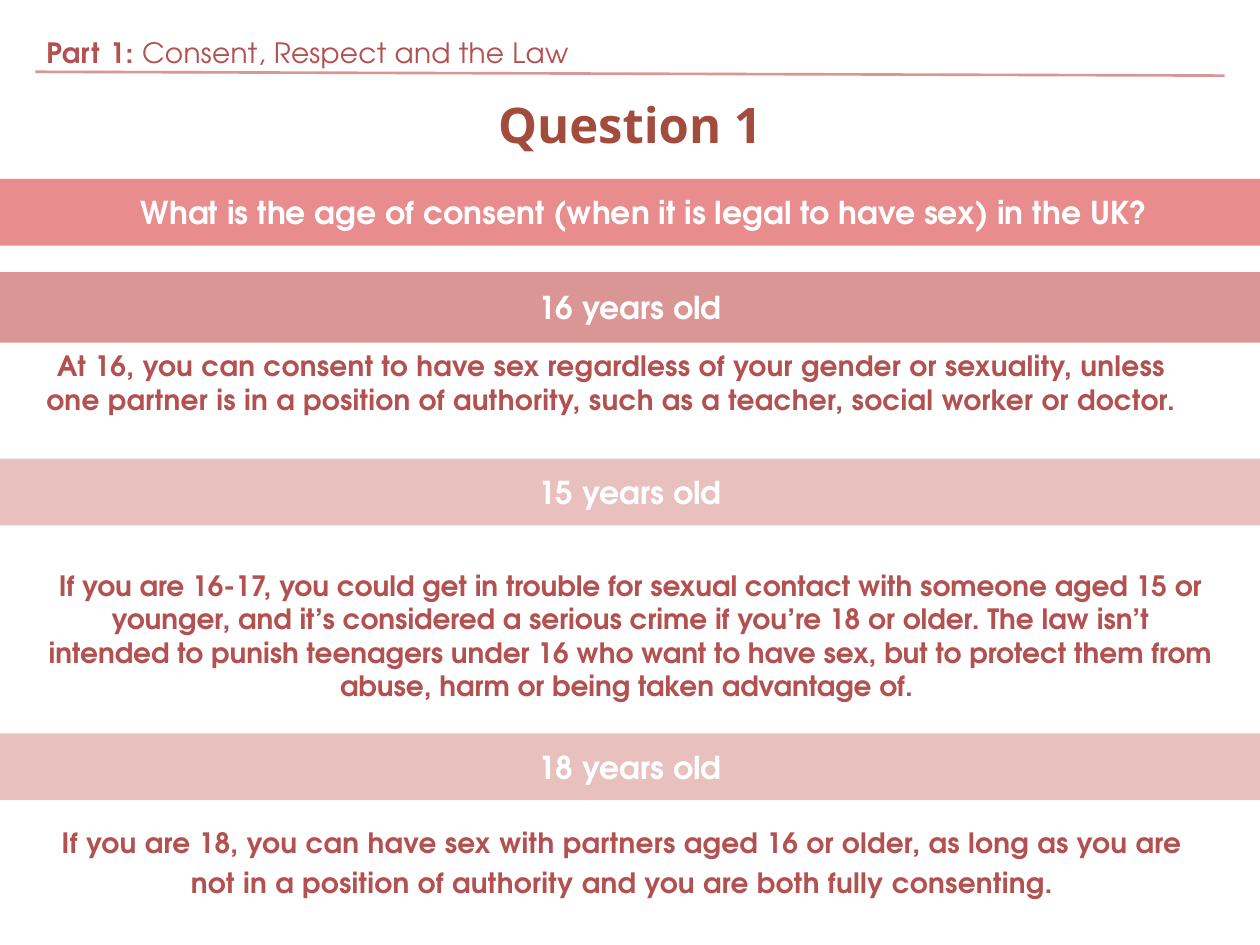
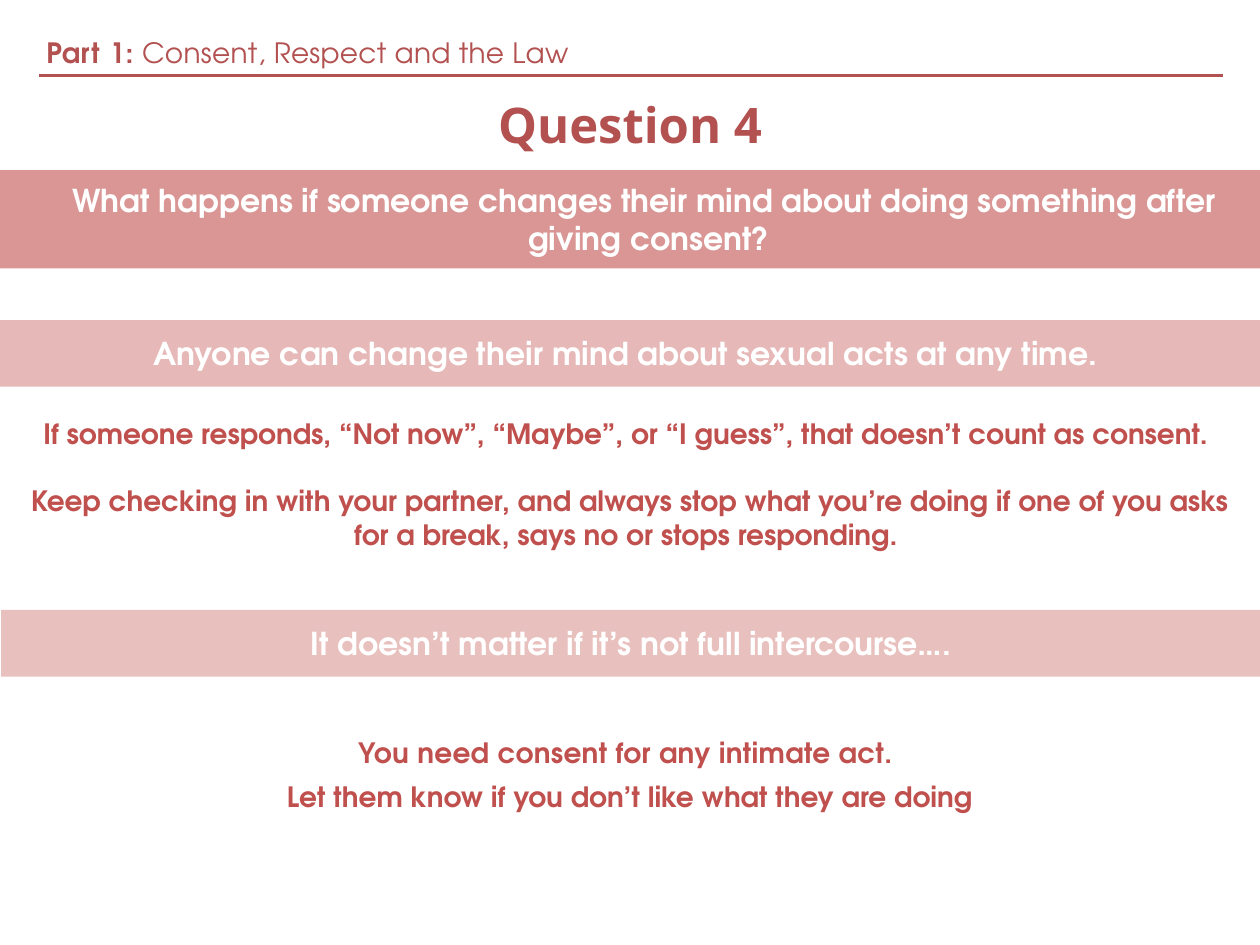
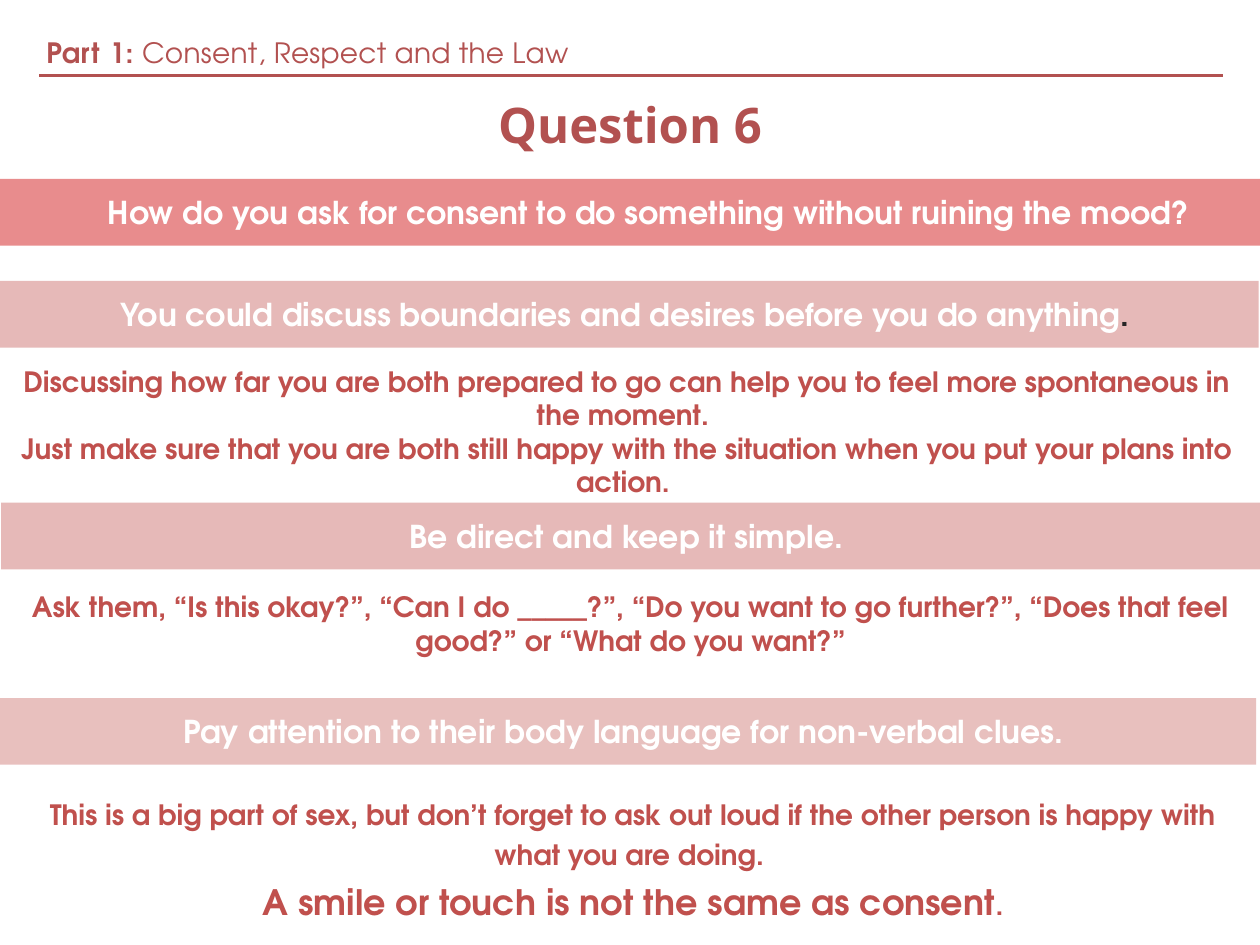
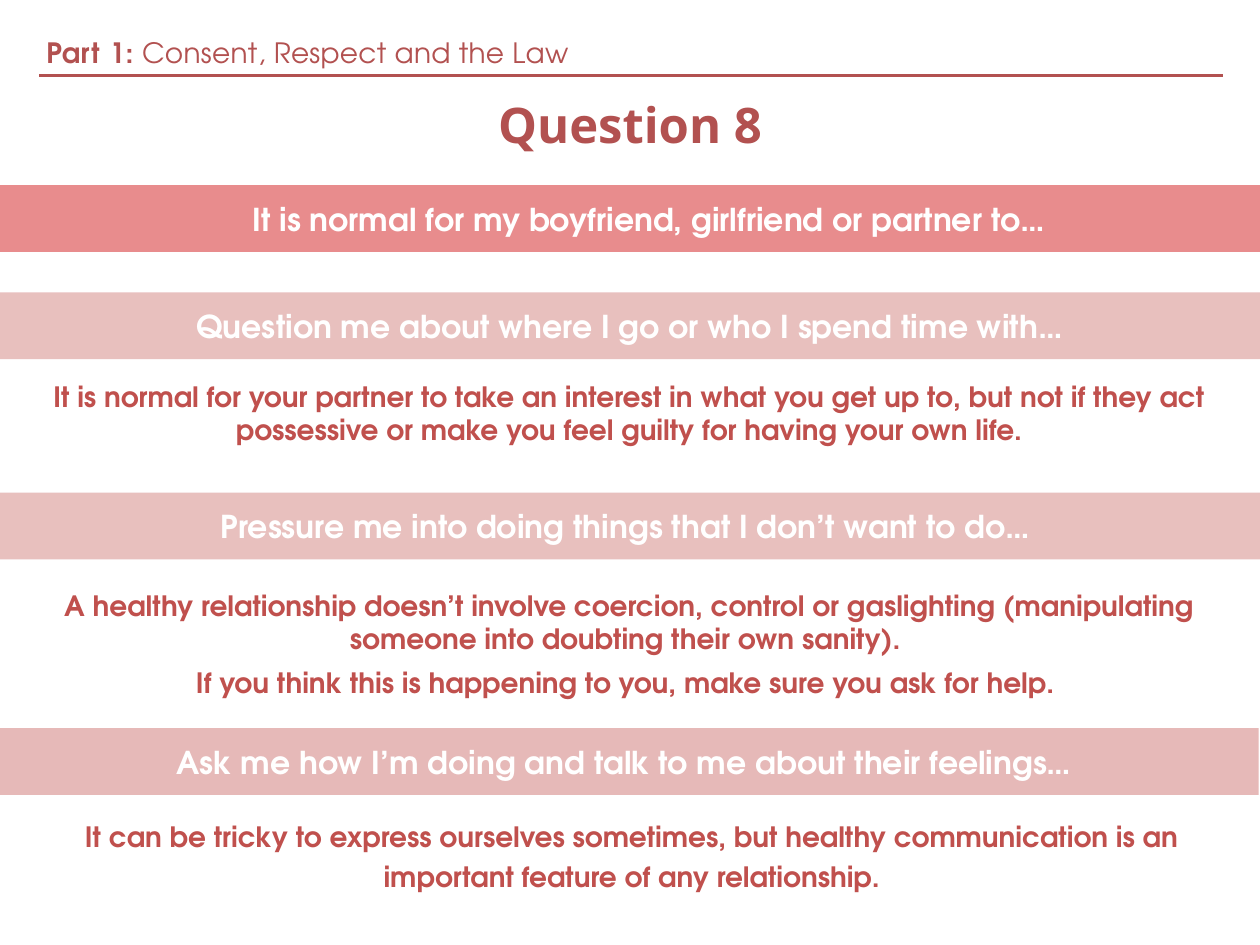
from lxml import etree
from pptx import Presentation
from pptx.dml.color import RGBColor
from pptx.enum.shapes import MSO_CONNECTOR as Connector, MSO_SHAPE as Shape
from pptx.enum.text import MSO_ANCHOR as Anchor, MSO_AUTO_SIZE as AutoSize, PP_ALIGN as Align
from pptx.oxml.ns import qn
from pptx.util import Emu, Pt

EMU_PER_PX = 9144
WIDTH, HEIGHT = 1000, 750
BAND_HEIGHT = 53
QUESTION_INDENT = 30
TITLE_FONT = "Open Sans"
TEXT_FONT = "TeX Gyre Adventor"
COLORS = {
    "white": "FFFFFF",
    "ink": "262626",
    "brown": "A24C3E",
    "brick": "B25150",
    "red": "C0504D",
    "scarlet": "D94041",
    "rose": "D99694",
    "blush": "E6B9B8",
}


def px(length):
    """Turn a length in px into EMU."""
    return Emu(length * EMU_PER_PX)


def px_box(box):
    """Turn a left, top, width, height box into EMU."""
    return [px(length) for length in box]


def rgb(color):
    """Look up a named colour."""
    return RGBColor.from_string(COLORS[color])


def add_run(paragraph, text, size=16, color="red", bold=True, font=TEXT_FONT, spacing=0):
    """Add text to a paragraph as one styled run per line."""
    for number, line in enumerate(text.split("\n")):
        if number:
            paragraph.add_line_break()
        run = paragraph.add_run()
        run.text = line
        run.font.name = font
        run.font.size = Pt(size)
        run.font.bold = bold
        run.font.color.rgb = rgb(color)
        if spacing:
            run._r.get_or_add_rPr().set("spc", str(spacing))


def add_header(slide, color, rule_start, rule_end):
    """Add the running part heading and the rule under it."""
    header = slide.shapes.add_textbox(*px_box((27, 23, 973, 31)))
    header.text_frame.word_wrap = True
    paragraph = header.text_frame.paragraphs[0]
    for text, spacing, bold in (
        ("Pa", 20, True),
        ("rt", 90, True),
        (" 1: ", 20, True),
        ("Consent, Respect and the Law", 20, False),
    ):
        add_run(paragraph, text, color="brick", bold=bold, spacing=spacing)
    rule = slide.shapes.add_connector(Connector.STRAIGHT, *px_box(rule_start + rule_end))
    rule.line.color.rgb = rgb(color)
    rule.line.width = Pt(1.5)
    etree.SubElement(rule._element.spPr, qn("a:effectLst"))


def add_title(slide, text, color):
    """Place the slide title across the full width."""
    title = slide.shapes.title
    title.left, title.top, title.width, title.height = px_box((0, 70, WIDTH, 56))
    frame = title.text_frame
    frame.auto_size = AutoSize.NONE
    frame.vertical_anchor = Anchor.MIDDLE
    paragraph = frame.paragraphs[0]
    paragraph.alignment = Align.CENTER
    add_run(paragraph, text, size=28, color=color, font=TITLE_FONT)


def add_band(slide, top, text, fill="rose", opacity=60, left=0, width=WIDTH,
             height=BAND_HEIGHT, indent=0, ending=""):
    """Add a coloured band with centred white text."""
    band = slide.shapes.add_shape(Shape.RECTANGLE, *px_box((left, top, width, height)))
    band.shadow.inherit = False
    band.fill.solid()
    band.fill.fore_color.rgb = rgb(fill)
    band.line.fill.background()
    if opacity < 100:
        tint = band._element.spPr.find(qn("a:solidFill"))[0]
        etree.SubElement(tint, qn("a:alpha"), val=str(opacity * 1000))
    frame = band.text_frame
    frame.word_wrap = True
    frame.vertical_anchor = Anchor.MIDDLE
    paragraph = frame.paragraphs[0]
    paragraph.alignment = Align.CENTER
    if indent:
        paragraph._p.get_or_add_pPr().set("marL", str(px(indent)))
    add_run(paragraph, text, size=18, color="white")
    if ending:
        add_run(paragraph, ending, size=18, color="ink")


def add_question(slide, top, text, fill="scarlet", height=BAND_HEIGHT):
    """Add the band that asks the question."""
    add_band(slide, top, text, fill, height=height, indent=QUESTION_INDENT)


def add_body(slide, box, paragraphs, color="red", leading=None, before=0, after=0):
    """Add centred paragraphs, each a list of (text, run options) pairs."""
    body = slide.shapes.add_textbox(*px_box(box))
    frame = body.text_frame
    frame.word_wrap = True
    frame.auto_size = AutoSize.SHAPE_TO_FIT_TEXT
    for number, runs in enumerate(paragraphs):
        paragraph = frame.add_paragraph() if number else frame.paragraphs[0]
        paragraph.alignment = Align.CENTER
        paragraph.space_after = Pt(after)
        if number and before:
            paragraph.space_before = Pt(before)
        if leading:
            paragraph.line_spacing = Pt(leading)
        for text, options in runs:
            add_run(paragraph, text, color=color, **options)


def start_slide(presentation, title, color="brick", rule_color="brick",
                rule_start=(31, 60), rule_end=(971, 60)):
    """Add a slide with the shared header and title."""
    slide = presentation.slides.add_slide(presentation.slide_layouts[5])
    add_header(slide, rule_color, rule_start, rule_end)
    add_title(slide, title, color)
    return slide


def build_age_slide(presentation):
    """Build the slide on the age of consent."""
    slide = start_slide(presentation, "Question 1", "brown", "rose", (28, 57), (972, 60))
    spaced = {"spacing": 20}
    add_question(slide, 142, "What is the age of consent (when it is legal to have sex) in the UK? ")
    add_band(slide, 216, "16 years old", opacity=100, height=56)
    add_body(slide, (22, 272, 928, 64), [[(
        "At 16, you can consent to have sex regardless of your gender or sexuality, unless "
        "one partner is in a position of authority, such as a teacher, social worker or doctor.",
        spaced)]], "brick", after=6)
    add_band(slide, 364, "15 years old")
    add_body(slide, (28, 446, 945, 118), [[(
        "If you are 16-17, you could get in trouble for sexual contact with someone aged 15 or "
        "younger, and it’s considered a serious crime if you’re 18 or older. The law isn’t "
        "intended to punish teenagers under 16 who want to have sex, but to protect them from "
        "abuse, harm or being taken advantage of. ", {})]], "brick")
    add_band(slide, 582, "18 years old")
    add_body(slide, (31, 645, 927, 74), [[(
        "If you are 18, you can have sex with partners aged 16 or older, as long as you are "
        "not in a position of authority and you are both fully consenting.",
        spaced)]], "brick", leading=23, after=6)


def build_change_slide(presentation):
    """Build the slide on changing your mind."""
    slide = start_slide(presentation, "Question 4")
    add_question(slide, 135, "What happens if someone changes their mind about doing something "
                 "after \ngiving consent?", "red", 78)
    add_band(slide, 254, "Anyone can change their mind about sexual acts at any time. ",
             "blush", 100)
    add_body(slide, (0, 326, WIDTH, 118), [
        [("If someone responds, “Not now”, “Maybe”, or “I guess”, that doesn’t count as "
          "consent. ", {})],
        [("Keep checking in with your partner, and always stop what you’re doing if one of "
          "you asks for a break, says no or stops responding. ", {})],
    ], before=19)
    add_band(slide, 484, "It doesn’t matter if it’s not full intercourse….", left=1)
    add_body(slide, (0, 579, WIDTH, 72), [
        [("You need consent for any intimate act. ", {"spacing": 20})],
        [("Let them know if you don’t like what they are doing", {})],
    ], after=6)


def build_asking_slide(presentation):
    """Build the slide on asking for consent."""
    slide = start_slide(presentation, "Question 6")
    add_question(slide, 142, "How do you ask for consent to do something without ruining the mood?")
    add_band(slide, 223, "You could discuss boundaries and desires before you do anything",
             "blush", 100, width=999, ending=". ")
    add_body(slide, (-1, 284, 997, 118), [
        [("Discussing how far you are both prepared to go can help you to feel more "
          "spontaneous in the moment. ", {})],
        [("Just make sure that you are both still happy with the situation when you put "
          "your plans into action. ", {})],
    ])
    add_band(slide, 399, "Be direct and keep it simple. ", "blush", 100, left=1, width=999)
    add_body(slide, (2, 463, 997, 64), [[
        ("Ask them, “Is this okay?”, “Can I do ", {}),
        ("_____", {}),
        ("?”, “Do you want to go further?”, “Does that feel good?” or “What do you want?”", {}),
    ]])
    add_band(slide, 554, "Pay attention to their body language for non-verbal clues. ", width=997)
    add_body(slide, (4, 623, 997, 116), [
        [("This is a big part of sex, but don’t forget to ask out loud if the other person "
          "is happy with what you are doing. ", {})],
        [("A smile or touch is not the same as consent", {"size": 20}), (".", {})],
    ], leading=23, after=6)


def build_partner_slide(presentation):
    """Build the slide on what is normal for a partner."""
    slide = start_slide(presentation, "Question 8")
    add_question(slide, 147, "It is normal for my boyfriend, girlfriend or partner to…")
    add_band(slide, 232, "Question me about where I go or who I spend time with…")
    add_body(slide, (26, 296, 947, 64), [[(
        "It is normal for your partner to take an interest in what you get up to, but not if "
        "they act possessive or make you feel guilty for having your own life.", {})]])
    add_band(slide, 391, "Pressure me into doing things that I don’t want to do… ")
    add_body(slide, (26, 462, 947, 99), [
        [("A healthy relationship doesn’t involve coercion, control or gaslighting "
          "(manipulating someone into doubting their own sanity). ", {})],
        [("If you think this is happening to you, make sure you ask for help. ", {})],
    ], after=6)
    add_band(slide, 578, "Ask me how I’m doing and talk to me about their feelings… ",
             "blush", 100, left=-1)
    add_body(slide, (26, 640, 951, 74), [[(
        "It can be tricky to express ourselves sometimes, but healthy communication is an "
        "important feature of any relationship.", {})]], leading=23, after=6)


def main():
    """Build the four question slides and save them."""
    presentation = Presentation()
    presentation.slide_width = px(WIDTH)
    presentation.slide_height = px(HEIGHT)
    for build in (build_age_slide, build_change_slide, build_asking_slide, build_partner_slide):
        build(presentation)
    presentation.save("out.pptx")


if __name__ == "__main__":
    main()
